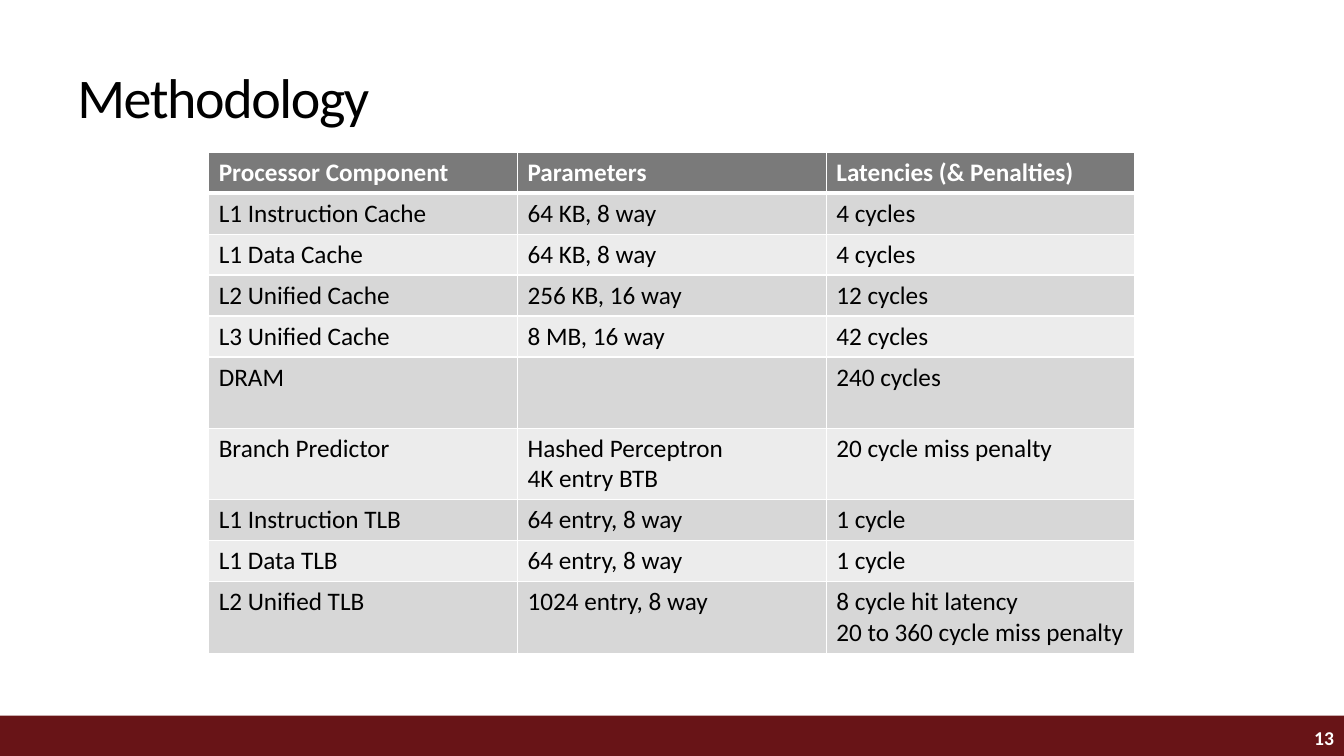
from dataclasses import dataclass

from lxml import etree
from pptx import Presentation
from pptx import util as u
from pptx.dml.color import RGBColor
from pptx.enum import shapes, text
from pptx.oxml import ns


@dataclass(frozen=True)
class Theme:
    font: str = "Calibri"
    black: str = "000000"
    white: str = "FFFFFF"
    maroon: str = "681417"
    header: str = "7A7A7A"
    bands: tuple[str, str] = ("D7D7D7", "ECECEC")
    title_size: int = 40
    body_size: int = 18
    number_size: int = 14
    thin: int = 1
    thick: int = 3


@dataclass(frozen=True)
class Area:
    left: float
    top: float
    width: float
    height: float

    def lengths(self) -> tuple[int, int, int, int]:
        return (
            int(SLIDE_WIDTH * self.left / 100),
            int(SLIDE_HEIGHT * self.top / 100),
            int(SLIDE_WIDTH * self.width / 100),
            int(SLIDE_HEIGHT * self.height / 100),
        )


@dataclass(frozen=True)
class Component:
    name: str
    parameters: str
    latency: str
    tall: bool = False


THEME = Theme()
SLIDE_WIDTH = u.Inches(13.33)
SLIDE_HEIGHT = u.Inches(7.5)
FOOTER_AREA = Area(0, 94.67, 100, 5.33)
TITLE_AREA = Area(5, 5.2, 92.5, 14.93)
TABLE_AREA = Area(15.53, 20.13, 68.93, 66.2)
NUMBER_AREA = Area(88.3, 95.2, 11.7, 4.8)
ROW_SHARE = 5.42
TALL_ROW_SHARE = 9.42

COMPONENTS = [
    Component("Processor Component", "Parameters", "Latencies (& Penalties)"),
    Component("L1 Instruction Cache", "64 KB, 8 way", "4 cycles"),
    Component("L1 Data Cache", "64 KB, 8 way", "4 cycles"),
    Component("L2 Unified Cache", "256 KB, 16 way", "12 cycles"),
    Component("L3 Unified Cache", "8 MB, 16 way", "42 cycles"),
    Component("DRAM", "", "240 cycles", tall=True),
    Component("Branch Predictor", "Hashed Perceptron\n4K entry BTB", "20 cycle miss penalty", tall=True),
    Component("L1 Instruction TLB", "64 entry, 8 way", "1 cycle"),
    Component("L1 Data TLB", "64 entry, 8 way", "1 cycle"),
    Component("L2 Unified TLB", "1024 entry, 8 way", "8 cycle hit latency\n20 to 360 cycle miss penalty", tall=True),
]


def format_text(text_frame, size: int, color: str, bold: bool = False, align=text.PP_ALIGN.LEFT) -> None:
    for paragraph in text_frame.paragraphs:
        paragraph.alignment = align
        for run in paragraph.runs:
            run.font.name = THEME.font
            run.font.size = u.Pt(size)
            run.font.bold = bold
            run.font.color.rgb = RGBColor.from_string(color)


def set_borders(cell, top: int, bottom: int) -> None:
    properties = cell._tc.get_or_add_tcPr()
    widths = {"lnL": THEME.thin, "lnR": THEME.thin, "lnT": top, "lnB": bottom}
    for side, width in widths.items():
        line = etree.SubElement(properties, ns.qn(f"a:{side}"), w=str(u.Pt(width)))
        fill = etree.SubElement(line, ns.qn("a:solidFill"))
        etree.SubElement(fill, ns.qn("a:srgbClr"), val=THEME.white)


def add_footer(slide, number: str) -> None:
    bar = slide.shapes.add_shape(shapes.MSO_SHAPE.RECTANGLE, *FOOTER_AREA.lengths())
    bar.shadow.inherit = False
    bar.fill.solid()
    bar.fill.fore_color.rgb = RGBColor.from_string(THEME.maroon)
    bar.line.fill.background()

    number_box = slide.shapes.add_textbox(*NUMBER_AREA.lengths())
    text_frame = number_box.text_frame
    text_frame.word_wrap = True
    text_frame.vertical_anchor = text.MSO_ANCHOR.MIDDLE
    text_frame.text = number
    format_text(text_frame, THEME.number_size, THEME.white, True, text.PP_ALIGN.RIGHT)


def place_title(slide, wording: str) -> None:
    title = slide.shapes.title
    title.left, title.top, title.width, title.height = TITLE_AREA.lengths()
    title.text_frame.text = wording
    title.text_frame.vertical_anchor = text.MSO_ANCHOR.MIDDLE
    format_text(title.text_frame, THEME.title_size, THEME.black)
    for run in title.text_frame.paragraphs[0].runs:
        run.font._element.set("spc", "-100")


def add_component_table(slide, components: list[Component]) -> None:
    table = slide.shapes.add_table(len(components), 3, *TABLE_AREA.lengths()).table
    for row_index, component in enumerate(components):
        is_header = row_index == 0
        share = TALL_ROW_SHARE if component.tall else ROW_SHARE
        table.rows[row_index].height = int(SLIDE_HEIGHT * share / 100)
        fill_color = THEME.header if is_header else THEME.bands[(row_index - 1) % 2]
        text_color = THEME.white if is_header else THEME.black
        top = THEME.thick if row_index == 1 else THEME.thin
        bottom = THEME.thick if is_header else THEME.thin
        wordings = (component.name, component.parameters, component.latency)
        for column_index, wording in enumerate(wordings):
            cell = table.cell(row_index, column_index)
            cell.text_frame.text = wording
            format_text(cell.text_frame, THEME.body_size, text_color, is_header)
            set_borders(cell, top, bottom)
            cell.fill.solid()
            cell.fill.fore_color.rgb = RGBColor.from_string(fill_color)


def main() -> None:
    presentation = Presentation()
    presentation.slide_width = SLIDE_WIDTH
    presentation.slide_height = SLIDE_HEIGHT
    slide = presentation.slides.add_slide(presentation.slide_layouts[5])
    place_title(slide, "Methodology")
    add_component_table(slide, COMPONENTS)
    add_footer(slide, "13")
    presentation.save("out.pptx")


if __name__ == "__main__":
    main()
